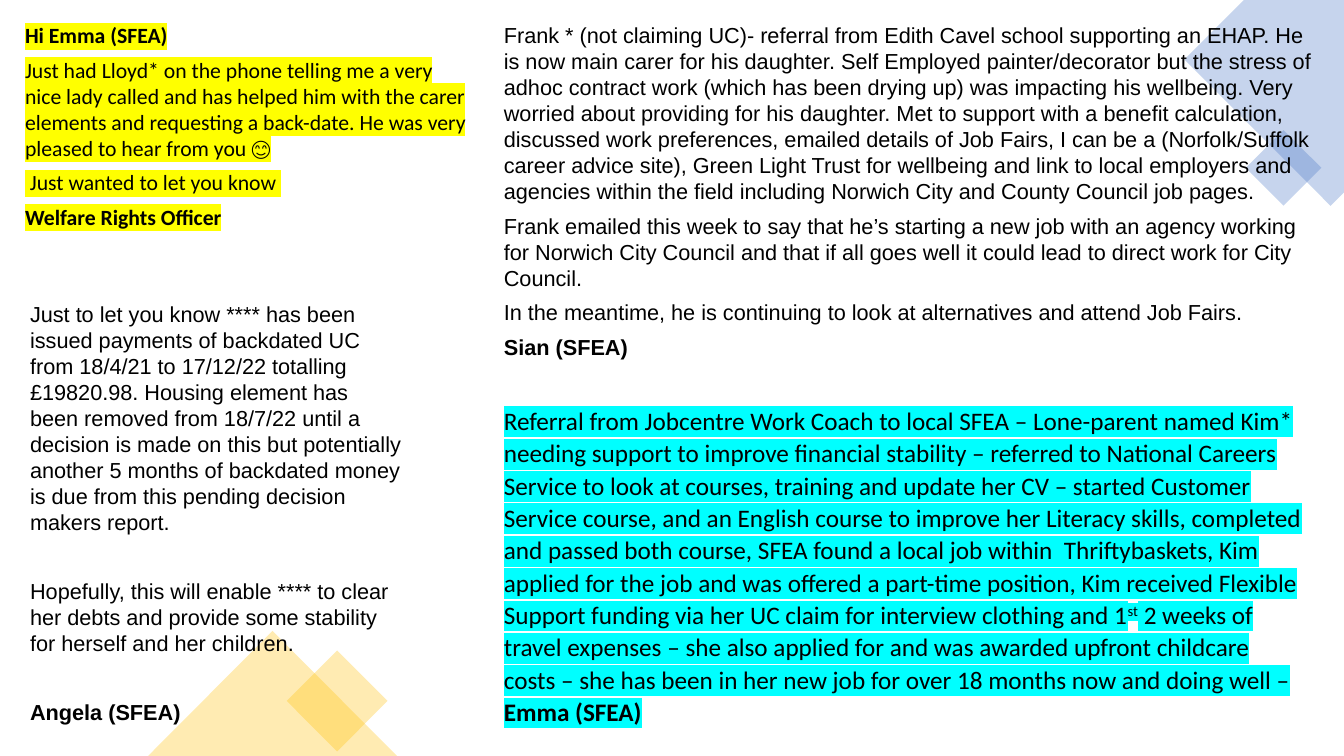
from lxml import etree
from pptx import Presentation
from pptx.dml.color import RGBColor
from pptx.enum import shapes, text
from pptx.oxml import ns
from pptx.util import Pt

BLUE, GOLD = "4472C4", "FFC000"
YELLOW, CYAN = "FFFF00", "00FFFF"


def color(hex_value):
    return RGBColor.from_string(hex_value)


def add_text(paragraph, content, size=15.5, font="Arial", bold=False, highlight=None, raised=False):
    run = paragraph.add_run()
    run.text = content
    run.font.size = Pt(size)
    run.font.name = font
    run.font.bold = bold
    run.font.color.rgb = color("000000")
    properties = run.font._element
    if raised:
        properties.set("baseline", "30000")
    if highlight:
        marker = etree.Element(ns.qn("a:highlight"))
        etree.SubElement(marker, ns.qn("a:srgbClr"), val=highlight)
        properties.find(ns.qn("a:solidFill")).addnext(marker)


deck = Presentation()
deck.slide_width, deck.slide_height = Pt(960), Pt(540)
slide = deck.slides.add_slide(deck.slide_layouts[6])

# Corner decorations
outline = slide.shapes.build_freeform(Pt(960), Pt(0))
outline.add_line_segments(
    [(Pt(x), Pt(y)) for x, y in [(888.5, 0), (846, 42.5), (950.4, 147), (960, 137.5)]], close=True)
decorations = [(outline.convert_to_shape(), BLUE, 0)]
for preset, left, top, width, height, fill, angle in [
    (shapes.MSO_SHAPE.RECTANGLE, 897.8, 100.8, 38.2, 38.2, BLUE, 315),
    (shapes.MSO_SHAPE.RECTANGLE, 215.3, 475.2, 51, 51, GOLD, 45),
    (shapes.MSO_SHAPE.ISOSCELES_TRIANGLE, 105.8, 450.7, 177.8, 89.3, GOLD, 0),
]:
    decoration = slide.shapes.add_shape(preset, Pt(left), Pt(top), Pt(width), Pt(height))
    decorations.append((decoration, fill, angle))
for decoration, fill, angle in decorations:
    decoration.rotation = angle
    decoration.shadow.inherit = False
    decoration.line.fill.background()
    decoration.fill.solid()
    decoration.fill.fore_color.rgb = color(fill)
    tint = decoration.fill._xPr.find(ns.qn("a:solidFill"))[0]
    etree.SubElement(tint, ns.qn("a:alpha"), val="30000")

# Testimonials: box, line spacing, space after, shared format, paragraphs of runs
bold = {"bold": True}
testimonials = [
    ((352.8, 12.2, 596.2, 250.6), 1, 6, {}, [
        [("Frank * (not claiming UC)- referral from Edith Cavel school supporting an EHAP. He is now "
          "main carer for his daughter. Self Employed painter/decorator but the stress of adhoc "
          "contract work (which has been drying up) was impacting his wellbeing. Very worried about "
          "providing for his daughter. Met to support with a benefit calculation, discussed work "
          "preferences, emailed details of Job Fairs, I can be a (Norfolk/Suffolk career advice "
          "site), Green Light Trust for wellbeing and link to local employers and agencies within "
          "the field including Norwich City and County Council job pages.", {})],
        [("Frank emailed this week to say that he’s starting a new job with an agency working for "
          "Norwich City Council and that if all goes well it could lead to direct work for City "
          "Council.", {})],
        [("In the meantime, he is continuing to look at alternatives and attend Job Fairs.", {})],
        [("Sian (SFEA)", bold)],
    ]),
    ((10.8, 12.2, 330.5, 209.5), 1, 6, {"font": "Calibri", "highlight": YELLOW}, [
        [("Hi Emma (SFEA)", bold)],
        [("Just had Lloyd* on the phone telling me a very nice lady called and has helped him with "
          "the carer elements and requesting a back-date. He was very pleased to hear from you ", {}),
         ("😊", {"font": "Karla"})],
        [(" Just wanted to let you know ", {})],
        [("Welfare Rights Officer", bold)],
    ]),
    ((14.4, 211, 280, 313.2), 1, 30.6, {}, [
        [("Just to let you know **** has been issued payments of backdated UC from 18/4/21 to "
          "17/12/22 totalling £19820.98. Housing element has been removed from 18/7/22 until a "
          "decision is made on this but potentially another 5 months of backdated money is due from "
          "this pending decision makers report.", {})],
        [("Hopefully, this will enable **** to clear her debts and provide some stability for "
          "herself and her children.", {})],
        [("Angela (SFEA)", bold)],
    ]),
    ((352.8, 284.4, 584.6, 239.8), 1.07, 8, {"size": 18, "font": "Calibri", "highlight": CYAN}, [
        [("Referral from Jobcentre Work Coach to local SFEA – Lone-parent named Kim* needing support "
          "to improve financial stability – referred to National Careers Service to look at courses, "
          "training and update her CV – started Customer Service course, and an English course to "
          "improve her Literacy skills, completed and passed both course, SFEA found a local job "
          "within  Thriftybaskets, Kim applied for the job and was offered a part-time position, Kim "
          "received Flexible Support funding via her UC claim for interview clothing and 1", {}),
         ("st", {"raised": True}),
         (" 2 weeks of travel expenses – she also applied for and was awarded upfront childcare costs "
          "– she has been in her new job for over 18 months now and doing well – ", {}),
         ("Emma (SFEA)", bold)],
    ]),
]
for box, line_spacing, space_after, shared, paragraphs in testimonials:
    frame = slide.shapes.add_textbox(*map(Pt, box)).text_frame
    frame.word_wrap = True
    frame.auto_size = text.MSO_AUTO_SIZE.SHAPE_TO_FIT_TEXT
    for index, runs in enumerate(paragraphs):
        paragraph = frame.add_paragraph() if index else frame.paragraphs[0]
        paragraph.line_spacing = line_spacing
        paragraph.space_after = Pt(space_after)
        for content, own in runs:
            add_text(paragraph, content, **{**shared, **own})

deck.save("out.pptx")
